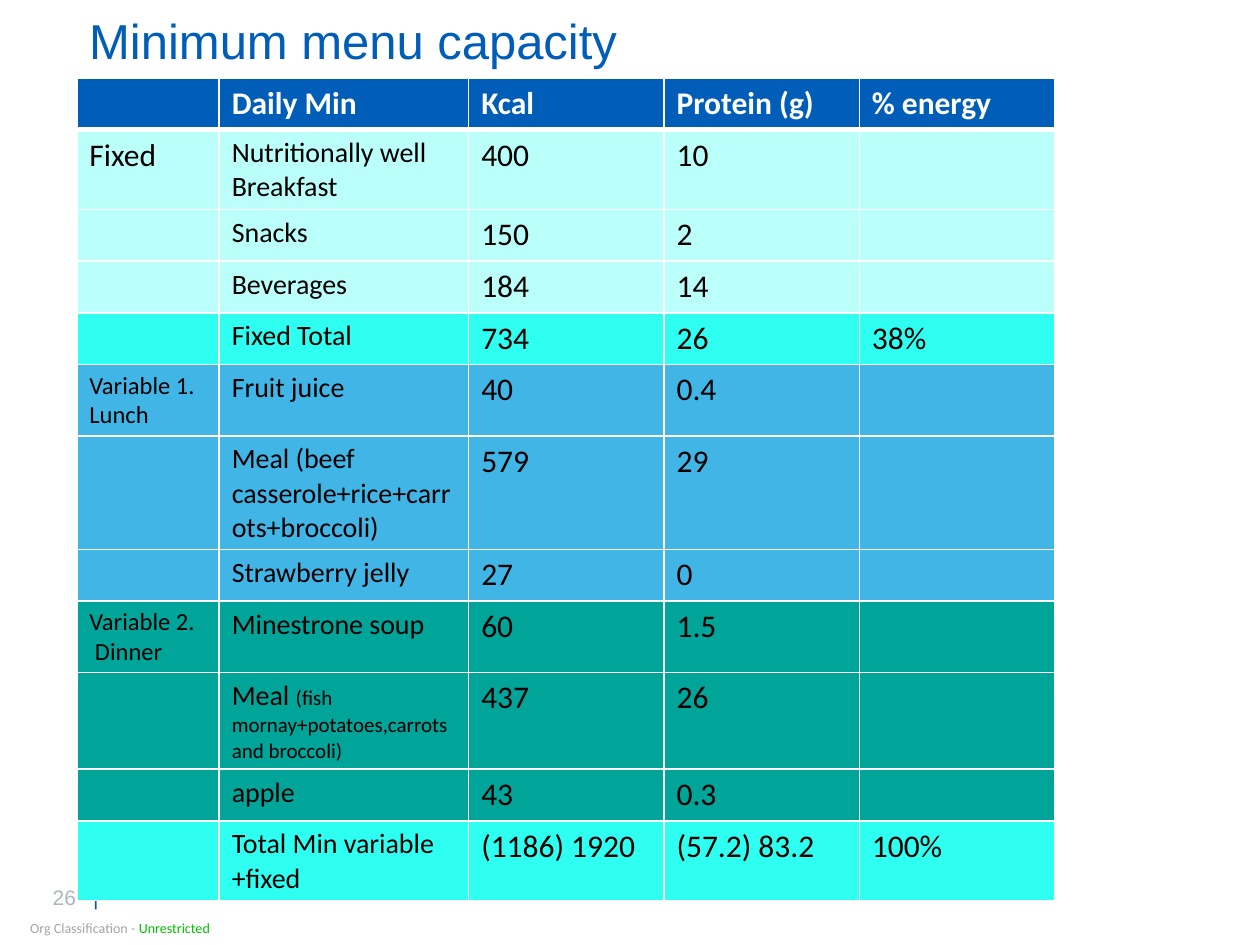
from lxml import etree
from pptx import Presentation
from pptx.dml.color import RGBColor
from pptx.enum import text
from pptx.oxml import ns
from pptx.util import Inches, Pt

NAVY, PALE, TURQUOISE, SKY, TEAL = "005EB8", "BAFFFA", "2FFFF1", "41B6E6", "00A499"
WHITE, BLACK, GRAY = "FFFFFF", "000000", "ADB6BE"
COLUMN_WIDTHS = [1.13, 1.98, 1.55, 1.55, 1.55]
HEADINGS = ["", "Daily Min", "Kcal", "Protein (g)", "% energy"]
MENU = [
    (PALE, "Fixed", "Nutritionally well Breakfast", "400", "10", ""),
    (PALE, "", "Snacks", "150", "2", ""),
    (PALE, "", "Beverages", "184", "14", ""),
    (TURQUOISE, "", "Fixed Total", "734", "26", "38%"),
    (SKY, "Variable 1.\nLunch", "Fruit juice", "40", "0.4", ""),
    (SKY, "", "Meal (beef casserole+rice+carrots+broccoli)", "579", "29", ""),
    (SKY, "", "Strawberry jelly", "27", "0", ""),
    (TEAL, "Variable 2.\n Dinner", "Minestrone soup", "60", "1.5", ""),
    (TEAL, "", "Meal |(fish mornay+potatoes,carrots and broccoli)", "437", "26", ""),
    (TEAL, "", "apple", "43", "0.3", ""),
    (TURQUOISE, "", "Total Min variable +fixed", "(1186) 1920", "(57.2) 83.2", "100%"),
]


def rgb(hex_color):
    """Turn a hex string into a colour."""
    return RGBColor.from_string(hex_color)


def style(font, size, color, name="Calibri", bold=False):
    """Set the face, size, colour and weight of a font."""
    font.name, font.size, font.bold = name, Pt(size), bold
    font.color.rgb = rgb(color)


def add_line(slide, box, parts, size, name):
    """Add a one-line text box made of (wording, colour) parts."""
    frame = slide.shapes.add_textbox(*map(Inches, box)).text_frame
    frame.word_wrap = True
    frame.vertical_anchor = text.MSO_ANCHOR.TOP
    line = frame.paragraphs[0]
    for wording, color in parts:
        run = line.add_run()
        run.text = wording
        style(run.font, size, color, name)
    return line


def add_tab_stop(paragraph, inches):
    """Put a left tab stop on a paragraph."""
    stops = etree.SubElement(paragraph._p.get_or_add_pPr(), ns.qn("a:tabLst"))
    etree.SubElement(stops, ns.qn("a:tab"), pos=str(Inches(inches)), algn="l")


def set_borders(cell, top, bottom):
    """Draw white cell borders, with top and bottom widths in points."""
    properties = cell._tc.get_or_add_tcPr()
    widths = {"lnL": 1, "lnR": 1, "lnT": top, "lnB": bottom}
    for position, (side, width) in enumerate(widths.items()):
        border = etree.Element(ns.qn(f"a:{side}"), w=str(Pt(width)))
        fill = etree.SubElement(border, ns.qn("a:solidFill"))
        etree.SubElement(fill, ns.qn("a:srgbClr"), val=WHITE)
        properties.insert(position, border)


def fill_cell(cell, wording, fill, size, color, bold):
    """Fill a cell; wording after a bar is set in small type."""
    cell.fill.solid()
    cell.fill.fore_color.rgb = rgb(fill)
    main, _, detail = wording.partition("|")
    cell.text_frame.text = main
    for paragraph in cell.text_frame.paragraphs:
        style(paragraph.font, size, color, bold=bold)
    if detail:
        run = cell.text_frame.paragraphs[-1].add_run()
        run.text = detail
        run.font.size = Pt(12)


def add_menu_table(slide):
    """Add the menu table with its heading row."""
    rows = [(NAVY, *HEADINGS), *MENU]
    table = slide.shapes.add_table(
        len(rows), len(COLUMN_WIDTHS), Inches(0.61), Inches(0.62),
        Inches(sum(COLUMN_WIDTHS)), Inches(0.41 * len(rows))).table
    for column, width in zip(table.columns, COLUMN_WIDTHS):
        column.width = Inches(width)
    for r, (fill, *wordings) in enumerate(rows):
        heading = r == 0
        table.rows[r].height = Inches(0.41)
        for c, wording in enumerate(wordings):
            size = 18
            if "\n" in wording:
                size = 14
            elif c == 1 and not heading:
                size = 16
            cell = table.cell(r, c)
            fill_cell(cell, wording, fill, size, WHITE if heading else BLACK, heading)
            set_borders(cell, 3 if r == 1 else 1, 3 if heading else 1)


def main():
    """Build the menu capacity slide."""
    deck = Presentation()
    deck.slide_width, deck.slide_height = Inches(10), Inches(7.5)
    slide = deck.slides.add_slide(deck.slide_layouts[6])
    page = add_line(slide, (0.32, 6.97, 0.71, 0.3),
                    [("26\t", GRAY), ("|", NAVY)], 12, "Arial")
    add_tab_stop(page, 0.32)
    title = add_line(slide, (0.61, 0.09, 7.18, 0.67),
                     [("Minimum menu capacity", NAVY)], 28, "Arial")
    title.line_spacing = 0.9
    add_menu_table(slide)
    add_line(slide, (0.14, 7.25, 9.72, 0.24),
             [("Org Classification - ", "A5A5A5"), ("Unrestricted", "00C000")], 8, "Calibri")
    deck.save("out.pptx")


if __name__ == "__main__":
    main()
